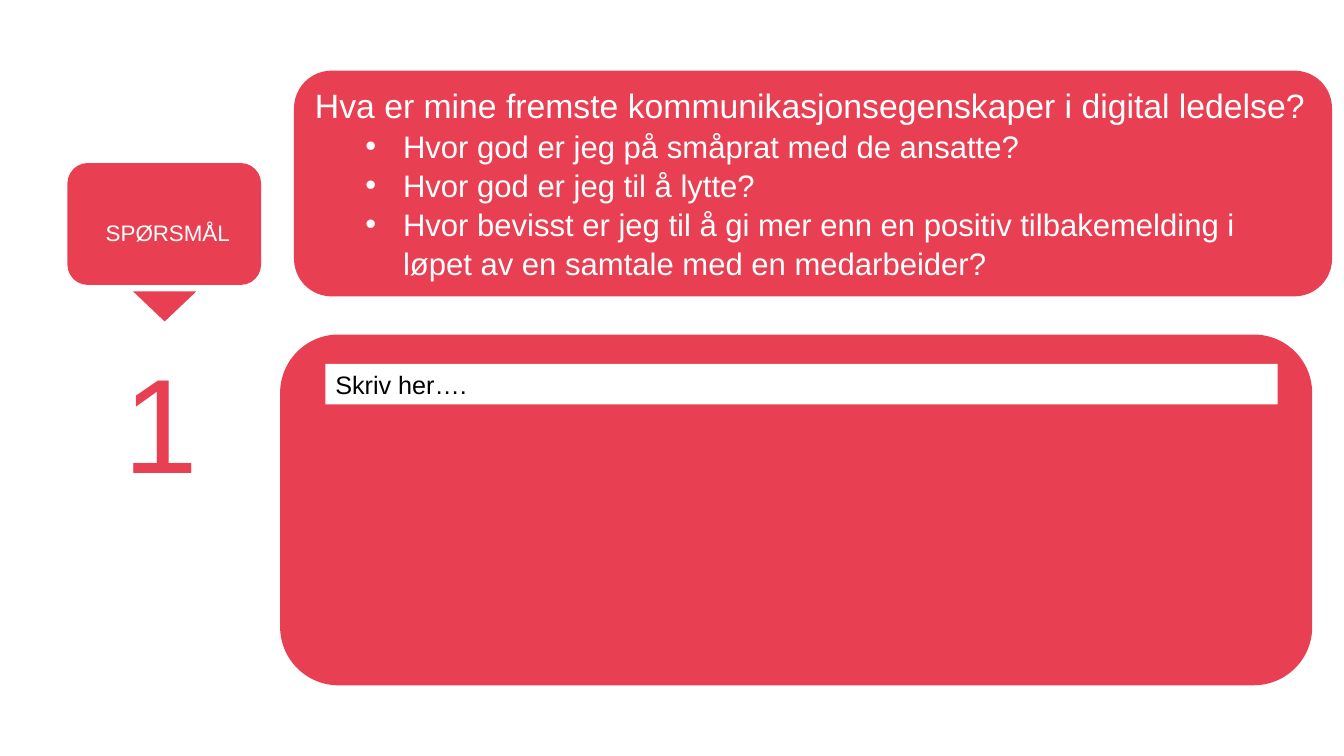
from dataclasses import dataclass

from lxml.etree import SubElement
from pptx import Presentation
from pptx.dml.color import RGBColor
from pptx.enum.shapes import MSO_SHAPE as Kind
from pptx.enum.text import MSO_ANCHOR as Anchor, PP_ALIGN as Align
from pptx.oxml.ns import qn
from pptx.util import Cm, Pt

COLORS = {"red": "E83F53", "white": "FFFFFF", "black": "000000"}
FONT = "Arial"


@dataclass
class Line:
    text: str
    size: float
    color: str = "white"
    align: Align = Align.LEFT
    bullet: bool = False


@dataclass
class Box:
    kind: Kind
    left: float
    top: float
    width: float
    height: float
    fill: str | None = "red"
    lines: tuple[Line, ...] = ()
    anchor: Anchor = Anchor.TOP
    turn: int = 0


def rgb(name: str) -> RGBColor:
    return RGBColor.from_string(COLORS[name])


def add_line(para, line: Line) -> None:
    para.text = line.text
    para.alignment = line.align
    if line.bullet:
        para.level = 1
        para.line_spacing = 1.05
        props = para._p.get_or_add_pPr()
        props.set("marL", str(Cm(2.22)))
        props.set("indent", str(-Cm(0.95)))
        SubElement(props, qn("a:buFont"), typeface=FONT)
        SubElement(props, qn("a:buChar"), char="•")
    font = para.font
    font.name, font.size = FONT, Pt(line.size)
    font.color.rgb = rgb(line.color)


def add_box(shapes, box: Box) -> None:
    area = [Cm(n) for n in (box.left, box.top, box.width, box.height)]
    shape = shapes.add_shape(box.kind, *area)
    shape.shadow.inherit = False
    shape.rotation = box.turn
    shape.line.fill.background()
    if box.fill:
        shape.fill.solid()
        shape.fill.fore_color.rgb = rgb(box.fill)
    else:
        shape.fill.background()
    frame = shape.text_frame
    frame.word_wrap = True
    frame.vertical_anchor = box.anchor
    for i, line in enumerate(box.lines):
        add_line(frame.add_paragraph() if i else frame.paragraphs[0], line)


HEAD = Line("Hva er mine fremste kommunikasjonsegenskaper i digital ledelse?", 24.1)
POINTS = (
    "Hvor god er jeg på småprat med de ansatte?",
    "Hvor god er jeg til å lytte?",
    "Hvor bevisst er jeg til å gi mer enn en positiv tilbakemelding i "
    "løpet av en samtale med en medarbeider?",
)
ASK = (HEAD, *(Line(text, 22.2, bullet=True) for text in POINTS))

# Label with its pointer
LABEL = (
    Box(Kind.ROUNDED_RECTANGLE, 1.7, 4.11, 4.88, 3.07),
    Box(Kind.ISOSCELES_TRIANGLE, 3.35, 7.34, 1.6, 0.76, turn=180),
    Box(Kind.RECTANGLE, 1.88, 4.47, 4.7, 2.79, None,
        (Line("SPØRSMÅL", 16, align=Align.CENTER),), Anchor.MIDDLE),
)

# Question, number and answer field
BODY = (
    Box(Kind.ROUNDED_RECTANGLE, 7.41, 1.78, 26.16, 5.69, "red", ASK, Anchor.MIDDLE),
    Box(Kind.RECTANGLE, 2.87, 8.43, 2.31, 4.37, "white", (Line("1", 96, "red"),)),
    Box(Kind.ROUNDED_RECTANGLE, 7.06, 8.43, 26.01, 8.84),
    Box(Kind.RECTANGLE, 8.2, 9.17, 24, 1.02, "white",
        (Line("Skriv her….", 18, "black"),)),
)


def main() -> None:
    deck = Presentation()
    deck.slide_width, deck.slide_height = Cm(33.87), Cm(19.05)
    slide = deck.slides.add_slide(deck.slide_layouts[6])
    group = slide.shapes.add_group_shape()
    for box in LABEL:
        add_box(group.shapes, box)
    for box in BODY:
        add_box(slide.shapes, box)
    deck.save("out.pptx")


if __name__ == "__main__":
    main()
